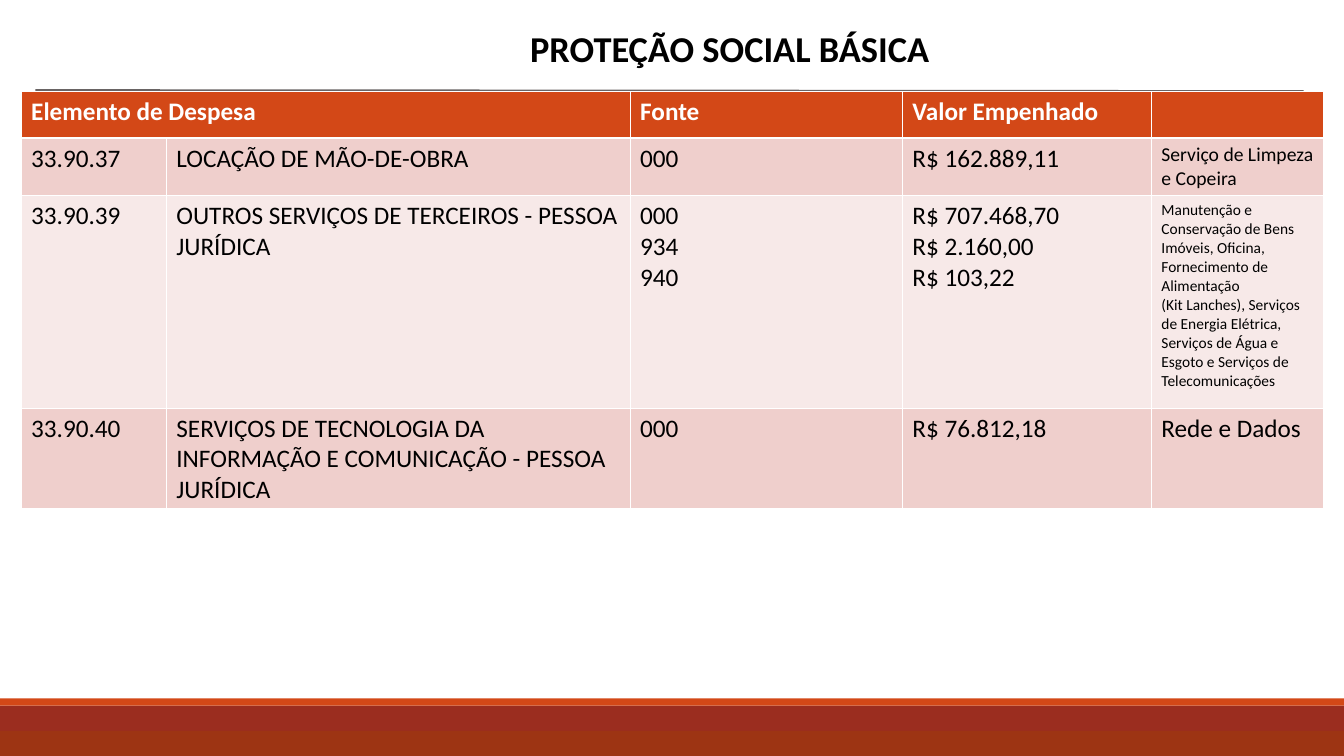
from lxml import etree
from pptx import Presentation
from pptx.dml.color import RGBColor
from pptx.enum.shapes import MSO_CONNECTOR, MSO_SHAPE
from pptx.enum.text import PP_ALIGN
from pptx.oxml.ns import qn
from pptx.util import Inches, Pt

RECTANGLE = MSO_SHAPE.RECTANGLE
STRAIGHT = MSO_CONNECTOR.STRAIGHT
CENTER = PP_ALIGN.CENTER

BLACK = RGBColor(0x00, 0x00, 0x00)
WHITE = RGBColor(0xFF, 0xFF, 0xFF)
GRAY = RGBColor(0x69, 0x64, 0x64)
ORANGE = RGBColor(0xD3, 0x48, 0x17)
RED = RGBColor(0x9B, 0x2D, 0x1F)
BROWN = RGBColor(0x9E, 0x36, 0x11)
ROSE = RGBColor(0xEF, 0xCF, 0xCC)
PALE_ROSE = RGBColor(0xF7, 0xE9, 0xE8)

WIDTH, HEIGHT = 13.33, 7.5


def write(frame, text, size, color, bold):
    """Put each line of text in its own formatted paragraph."""
    frame.text = text
    for para in frame.paragraphs:
        font = para.font
        for span in para.runs:
            font = span.font
        formats = {"name": "Calibri", "size": Pt(size), "bold": bold}
        for name, value in formats.items():
            setattr(font, name, value)
        font.color.rgb = color


deck = Presentation()
deck.slide_width, deck.slide_height = Inches(WIDTH), Inches(HEIGHT)
page = deck.slides.add_slide(deck.slide_layouts[6])

# Footer bands: top, height, colour, opacity in percent
bands = [
    (7, 0.5, RED, 100),
    (6.93, 0.07, ORANGE, 100),
    (7.25, 0.25, BROWN, 85),
]
for top, height, color, opacity in bands:
    band = page.shapes.add_shape(RECTANGLE, 0, Inches(top), Inches(WIDTH), Inches(height))
    band.shadow.inherit = False
    band.fill.solid()
    band.fill.fore_color.rgb = color
    band.line.fill.background()
    if opacity < 100:
        tint = band.fill._xPr.find(qn("a:solidFill"))[0]
        etree.SubElement(tint, qn("a:alpha")).set("val", str(opacity * 1000))

# Rule under the title
rule = page.shapes.add_connector(
    STRAIGHT, Inches(0.35), Inches(0.9), Inches(12.93), Inches(0.91))
rule.line.color.rgb = GRAY
rule.line.width = Pt(2.25)
etree.SubElement(rule._element.spPr, qn("a:effectLst"))

# Title
box = page.shapes.add_textbox(Inches(5), Inches(0.21), Inches(4.48), Inches(0.54))
box.text_frame.word_wrap = True
write(box.text_frame, "PROTEÇÃO SOCIAL BÁSICA", 26, BLACK, True)
box.text_frame.paragraphs[0].alignment = CENTER

# Expense table: the default style supplies the white borders
column_widths = [1.44, 4.6, 2.7, 2.47, 1.71]
row_heights = [0.46, 0.57, 2.11, 1.0]
row_fills = [ORANGE, ROSE, PALE_ROSE, ROSE]
note_sizes = [18, 14, 11, 18]
expenses = [
    ["Elemento de Despesa", "", "Fonte", "Valor Empenhado", ""],
    ["33.90.37", "LOCAÇÃO DE MÃO-DE-OBRA", "000", "R$ 162.889,11",
     "Serviço de Limpeza e Copeira"],
    ["33.90.39", "OUTROS SERVIÇOS DE TERCEIROS - PESSOA JURÍDICA",
     "000\n934\n940", "R$ 707.468,70\nR$ 2.160,00\nR$ 103,22",
     "Manutenção e Conservação de Bens Imóveis, Oficina, "
     "Fornecimento de Alimentação\n"
     "(Kit Lanches), Serviços de Energia Elétrica, Serviços de Água e "
     "Esgoto e Serviços de Telecomunicações"],
    ["33.90.40", "SERVIÇOS DE TECNOLOGIA DA INFORMAÇÃO E COMUNICAÇÃO - PESSOA JURÍDICA",
     "000", "R$ 76.812,18", "Rede e Dados"],
]
table = page.shapes.add_table(
    len(row_heights), len(column_widths), Inches(0.21), Inches(0.91),
    Inches(sum(column_widths)), Inches(sum(row_heights))).table
for column, width in zip(table.columns, column_widths):
    column.width = Inches(width)
for r, texts in enumerate(expenses):
    table.rows[r].height = Inches(row_heights[r])
    header = r == 0
    for c, text in enumerate(texts):
        cell = table.cell(r, c)
        cell.fill.solid()
        cell.fill.fore_color.rgb = row_fills[r]
        size = note_sizes[r] if c == len(texts) - 1 else 18
        write(cell.text_frame, text, size, WHITE if header else BLACK, header)
table.cell(0, 0).merge(table.cell(0, 1))

deck.save("out.pptx")
